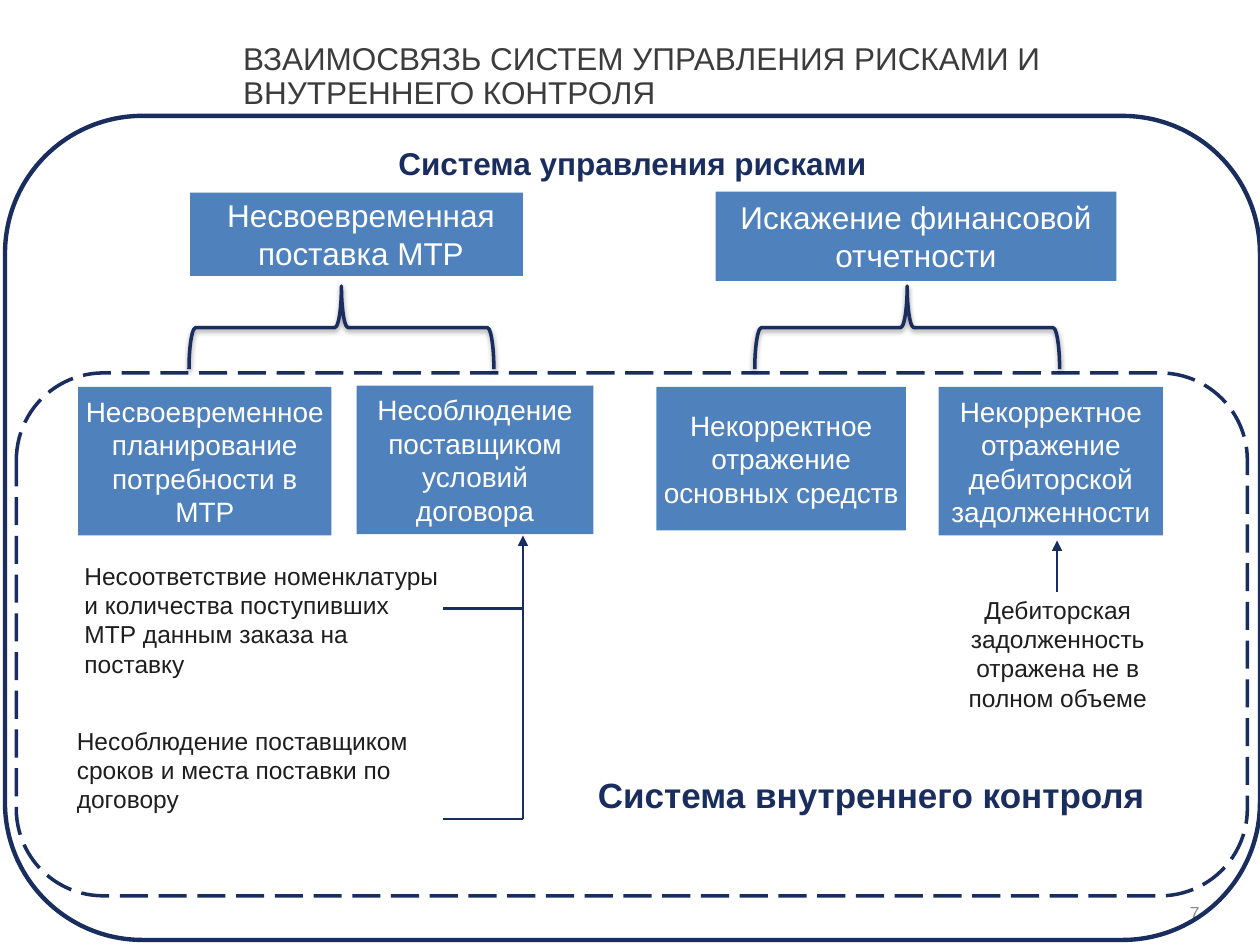
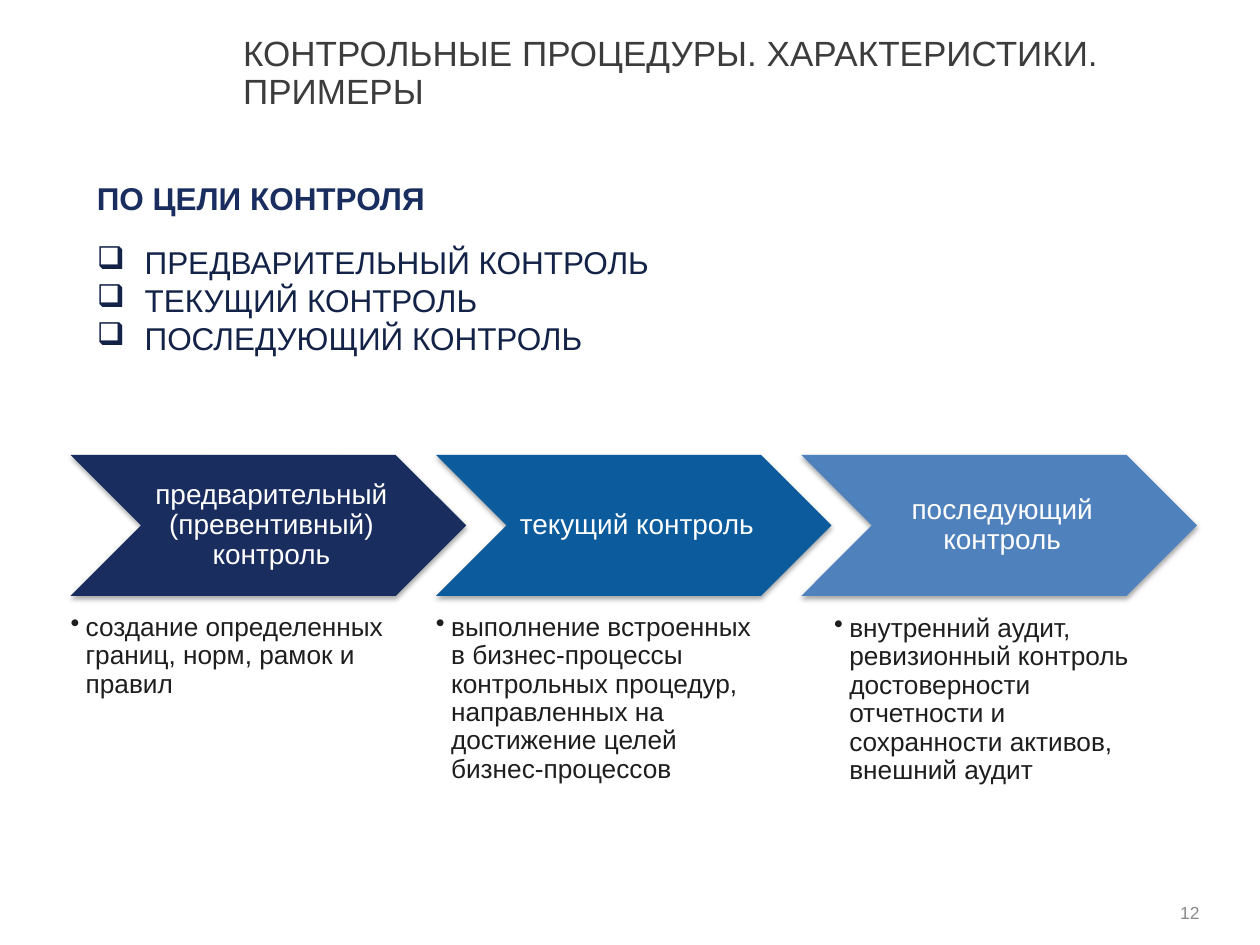
from lxml import etree
from pptx import Presentation
from pptx.dml.color import RGBColor
from pptx.enum.dml import MSO_LINE
from pptx.enum.shapes import MSO_CONNECTOR, MSO_SHAPE
from pptx.enum.text import MSO_ANCHOR, PP_ALIGN
from pptx.oxml.ns import qn
from pptx.util import Inches, Pt

RECT, ROUNDED = MSO_SHAPE.RECTANGLE, MSO_SHAPE.ROUNDED_RECTANGLE
BRACE, CHEVRON = MSO_SHAPE.RIGHT_BRACE, MSO_SHAPE.CHEVRON
STRAIGHT, LONG_DASH = MSO_CONNECTOR.STRAIGHT, MSO_LINE.LONG_DASH
LEFT, CENTER = PP_ALIGN.LEFT, PP_ALIGN.CENTER
RIGHT, JUSTIFY = PP_ALIGN.RIGHT, PP_ALIGN.JUSTIFY
TOP, MIDDLE = MSO_ANCHOR.TOP, MSO_ANCHOR.MIDDLE

FONT = "Arial"
NAVY, DEEP_NAVY, OCEAN, BLUE = "1A2D5F", "132247", "0C5B9D", "4F81BD"
WHITE, TEXT, TITLE, GREY = "FFFFFF", "1E1E1E", "3C3C3C", "8A8A8A"

# Every place is given in columns and rows of a square grid.
COLUMNS, ROWS = 100, 75
SLIDE_WIDTH = Inches(10)
CELL = SLIDE_WIDTH // COLUMNS

NO_INSETS = (0, 0, 0, 0)
LABEL_INSETS = (0.5, 0.5, 0.5, 0.5)
LIST_INSETS = (1, 0.5, 1, 0.5)
CHEVRON_INSETS = (0.7, 0.2, 0.2, 0.2)


def cells(*counts):
    return [round(count * CELL) for count in counts]


def color(hex_value):
    return RGBColor.from_string(hex_value)


def set_values(target, values):
    for name, value in values.items():
        setattr(target, name, value)


def add_bullet(para, symbol, margin, hanging):
    """Give a paragraph an indent in cells and, if there is one, a bullet symbol."""
    properties = para._p.get_or_add_pPr()
    left, indent = cells(margin, -hanging)
    properties.set("marL", str(left))
    properties.set("indent", str(indent))
    if symbol:
        etree.SubElement(properties, qn("a:buChar")).set("char", symbol)


def write(box, lines, size, ink, align=LEFT, anchor=TOP, insets=LABEL_INSETS,
          bold=False, spacing=1.0, bullet=None):
    frame = box.text_frame
    left, top, right, bottom = cells(*insets)
    set_values(frame, {
        "word_wrap": True, "vertical_anchor": anchor,
        "margin_left": left, "margin_top": top,
        "margin_right": right, "margin_bottom": bottom,
    })
    for index, line in enumerate(lines):
        para = frame.add_paragraph() if index else frame.paragraphs[0]
        set_values(para, {"alignment": align, "line_spacing": spacing})
        if bullet:
            add_bullet(para, *bullet)
        span = para.add_run()
        span.text = line
        set_values(span.font, {"name": FONT, "size": Pt(size), "bold": bold})
        span.font.color.rgb = color(ink)


def add_text(page, place, *lines, **style):
    write(page.shapes.add_textbox(*cells(*place)), lines, **style)


def add_figure(page, kind, place, fill=None, line=None, width=2):
    shape = page.shapes.add_shape(kind, *cells(*place))
    shape.shadow.inherit = False
    if fill:
        shape.fill.solid()
        shape.fill.fore_color.rgb = color(fill)
    else:
        shape.fill.background()
    if line:
        shape.line.color.rgb = color(line)
        shape.line.width = Pt(width)
    else:
        shape.line.fill.background()
    return shape


def add_shadow(shape, blur, distance, opacity):
    """Drop a black shadow straight down; blur and distance in points."""
    effects = shape._element.spPr.find(qn("a:effectLst"))
    shadow = etree.SubElement(effects, qn("a:outerShdw"), {
        "blurRad": str(Pt(blur)), "dist": str(Pt(distance)),
        "dir": "5400000", "rotWithShape": "0"})
    black = etree.SubElement(shadow, qn("a:srgbClr"), val="000000")
    etree.SubElement(black, qn("a:alpha"), val=str(opacity * 1000))


def add_line(page, start, end, arrow=False):
    line = page.shapes.add_connector(STRAIGHT, *cells(*start, *end))
    line.line.color.rgb = color(NAVY)
    line.line.width = Pt(1.5)
    if arrow:
        etree.SubElement(line.line._get_or_add_ln(), qn("a:tailEnd"), type="triangle")
    etree.SubElement(line._element.spPr, qn("a:effectLst"))


def add_risk(page, place, text, size, insets=LABEL_INSETS):
    box = add_figure(page, RECT, place, fill=BLUE)
    write(box, [text], size, WHITE, CENTER, MIDDLE, insets)


def add_brace(page, center):
    """Draw an upward brace whose point is at the given column."""
    width, height, middle = 6.6, 24.2, 26
    brace = add_figure(page, BRACE, (center - width / 2, middle - height / 2, width, height),
                       line=NAVY)
    brace.rotation = 270
    brace.adjustments[0], brace.adjustments[1] = 0.08, 0.5
    add_shadow(brace, 3, 1.6, 38)


def add_page(deck, title, title_size, title_top, number):
    page = deck.slides.add_slide(deck.slide_layouts[6])
    add_text(page, (90.9, 71.5, 4.3, 1.8), number, size=10, ink=GREY,
             align=RIGHT, anchor=MIDDLE, insets=NO_INSETS)
    add_text(page, (19.3, title_top, 76, 4.7), title, size=title_size, ink=TITLE,
             insets=NO_INSETS, spacing=0.9)
    return page


def build_systems_page(deck):
    page = add_page(deck, "ВЗАИМОСВЯЗЬ СИСТЕМ УПРАВЛЕНИЯ РИСКАМИ И ВНУТРЕННЕГО КОНТРОЛЯ",
                    18, 3.4, "7")
    control_area = add_figure(page, ROUNDED, (1.3, 29.6, 97.7, 41.5), fill=WHITE, line=NAVY)
    control_area.line.dash_style = LONG_DASH

    heading = {"ink": NAVY, "align": CENTER, "bold": True}
    add_text(page, (16.9, 10.9, 66.6, 4), "Система управления рисками", size=18, **heading)
    add_text(page, (46, 60.9, 46.3, 4.4), "Система внутреннего контроля", size=20, **heading)

    add_risk(page, (15.1, 15.3, 26.4, 6.6), "Несвоевременная поставка МТР", 18,
             insets=(1.2, 0.5, 0.5, 0.5))
    add_risk(page, (56.8, 15.2, 31.8, 7.1), "Искажение финансовой отчетности", 18)
    causes = [
        (6.2, 30.7, 20.1, 11.8, "Несвоевременное планирование потребности в МТР"),
        (28.3, 30.6, 18.8, 11.8, "Несоблюдение поставщиком условий договора"),
        (52.1, 30.7, 19.8, 11.4, "Некорректное отражение основных средств"),
        (74.5, 30.7, 17.8, 11.8, "Некорректное отражение дебиторской задолженности"),
    ]
    for *place, text in causes:
        add_risk(page, place, text, 16)

    details = [
        (74.5, 46.7, 18.9, 10.4, CENTER, "Дебиторская задолженность отражена не в полном объеме"),
        (6.2, 44, 29.6, 10.4, LEFT,
         "Несоответствие номенклатуры и количества поступивших МТР данным заказа на поставку"),
        (5.6, 57.1, 29.6, 8.1, LEFT,
         "Несоблюдение поставщиком сроков и места поставки по договору"),
    ]
    for *place, align, text in details:
        add_text(page, place, text, size=14, ink=TEXT, align=align)

    trunk = 41.5
    for branch_row in (48.3, 65):
        add_line(page, (35.2, branch_row), (trunk, branch_row))
    add_line(page, (trunk, 65), (trunk, 42.5), arrow=True)
    add_line(page, (83.9, 47), (83.9, 42.9), arrow=True)

    for center in (27.1, 72):
        add_brace(page, center)
    add_figure(page, ROUNDED, (0.4, 9.2, 99.6, 65.4), line=NAVY, width=2.5)


def build_procedures_page(deck):
    page = add_page(deck, "КОНТРОЛЬНЫЕ ПРОЦЕДУРЫ. ХАРАКТЕРИСТИКИ. ПРИМЕРЫ", 20, 2.9, "12")
    add_text(page, (5.9, 13.7, 64.6, 4), "ПО ЦЕЛИ КОНТРОЛЯ", size=18, ink=NAVY, bold=True,
             align=JUSTIFY, insets=LIST_INSETS, bullet=(None, 0.8, 0))
    add_text(page, (5.9, 18.8, 64.6, 10.1), "ПРЕДВАРИТЕЛЬНЫЙ КОНТРОЛЬ", "ТЕКУЩИЙ КОНТРОЛЬ",
             "ПОСЛЕДУЮЩИЙ КОНТРОЛЬ", size=18, ink=DEEP_NAVY, align=JUSTIFY,
             insets=LIST_INSETS, bullet=("❑", 4.6, 3.8))

    stages = [
        (NAVY, "предварительный (превентивный) контроль", 5.6, 48.7,
         "создание определенных границ, норм, рамок и правил"),
        (OCEAN, "текущий контроль", 34.6, 48.7,
         "выполнение встроенных в бизнес-процессы контрольных процедур, "
         "направленных на достижение целей бизнес-процессов"),
        (BLUE, "последующий контроль", 66.2, 48.8,
         "внутренний аудит, ревизионный контроль достоверности отчетности "
         "и сохранности активов, внешний аудит"),
    ]
    for index, (fill, name, note_left, note_top, note) in enumerate(stages):
        stage = add_figure(page, CHEVRON, (5.6 + 29 * index, 36.1, 31.4, 11.2), fill=fill)
        add_shadow(stage, 3.1, 1.8, 35)
        write(stage, [name], 16, WHITE, CENTER, MIDDLE, CHEVRON_INSETS, spacing=0.9)
        add_text(page, (note_left, note_top, 25.1, 13.1), note, size=15, ink=TEXT,
                 insets=NO_INSETS, spacing=0.9, bullet=("•", 1.2, 1.2))


def main():
    deck = Presentation()
    deck.slide_width, deck.slide_height = SLIDE_WIDTH, CELL * ROWS
    build_systems_page(deck)
    build_procedures_page(deck)
    deck.save("out.pptx")


if __name__ == "__main__":
    main()
